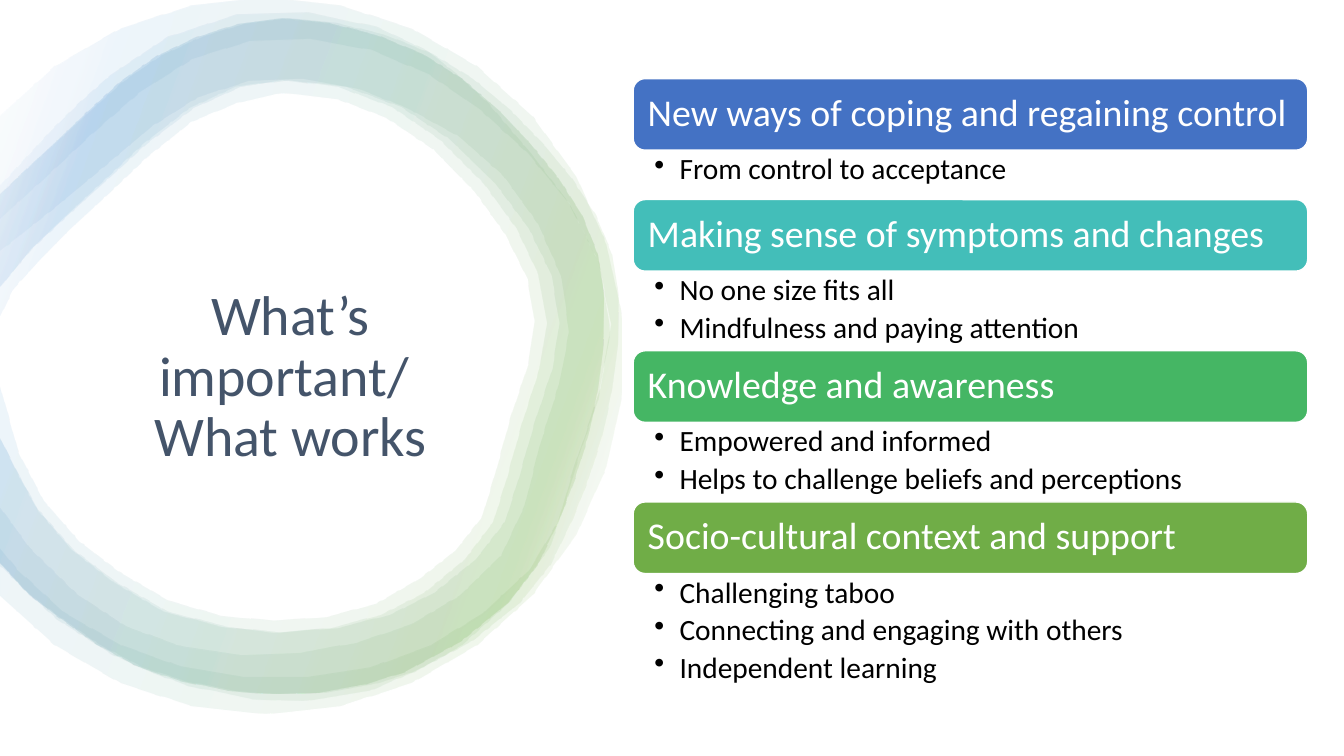
import math

import pptx
import pptx.dml.color
import pptx.enum.shapes
import pptx.enum.text
import pptx.oxml
import pptx.oxml.ns
import pptx.util
from pptx.util import Inches

RGBColor = pptx.dml.color.RGBColor
MSO_SHAPE = pptx.enum.shapes.MSO_SHAPE
MSO_ANCHOR = pptx.enum.text.MSO_ANCHOR
PP_ALIGN = pptx.enum.text.PP_ALIGN

WHITE = RGBColor(0xFF, 0xFF, 0xFF)
BLACK = RGBColor(0x00, 0x00, 0x00)
SLATE = RGBColor(0x44, 0x54, 0x6A)
BLUE = RGBColor(0x44, 0x72, 0xC4)
SKY = RGBColor(0x5B, 0x9B, 0xD5)
TEAL = RGBColor(0x43, 0xBE, 0xB9)
EMERALD = RGBColor(0x45, 0xB6, 0x64)
GREEN = RGBColor(0x70, 0xAD, 0x47)

RING_STOPS = [(2, WHITE), (16, GREEN), (85, SKY), (100, WHITE)]

# Ring edges in inches: outer ones run clockwise from the left slide edge,
# inner ones run back the other way.
LOOSE_OUTER = [
    (0, 1.84), (0.5, 1.3), (1.09, 0.75), (1.66, 0.37), (2.34, 0.15), (3.05, 0.13),
    (3.73, 0.27), (4.24, 0.51), (4.84, 1.03), (5.26, 1.52), (5.65, 2.03), (5.94, 2.62),
    (6.05, 3.29), (5.93, 3.96), (5.74, 4.52), (5.45, 5.43), (5.05, 5.97), (4.56, 6.41),
    (3.66, 6.85), (3, 6.95), (2.51, 6.93), (1.86, 6.8), (1.11, 6.49), (0.56, 6.14),
    (0, 5.61)]
LOOSE_INNER = [
    (0, 5.03), (0.29, 5.43), (0.76, 5.89), (1.25, 6.21), (1.81, 6.41), (2.39, 6.49),
    (2.97, 6.47), (3.53, 6.37), (4.07, 6.19), (4.56, 5.9), (4.97, 5.5), (5.2, 5.01),
    (5.35, 4.41), (5.54, 3.81), (5.64, 3.29), (5.56, 2.74), (5.33, 2.22), (4.99, 1.75),
    (4.55, 1.36), (4.04, 1.08), (3.53, 0.88), (2.99, 0.79), (2.46, 0.81), (1.96, 0.97),
    (1.5, 1.26), (1.05, 1.64), (0.57, 2.04), (0, 2.49)]
MAIN_OUTER = [
    (0, 1.92), (0.56, 1.39), (1.55, 0.55), (2.79, 0.18), (4.18, 0.53), (5.25, 1.42),
    (5.92, 2.52), (5.92, 3.86), (5.54, 5.14), (5.03, 5.97), (4, 6.66), (2.71, 6.88),
    (1.37, 6.61), (0.27, 5.88), (0, 5.58)]
THICK_INNER = [
    (0, 3.83), (0.18, 4.48), (0.43, 4.96), (0.78, 5.36), (1.67, 5.95), (2.71, 6.15),
    (3.72, 5.98), (4.51, 5.45), (4.77, 5.12), (4.9, 4.69), (5.05, 4.14), (5.23, 3.6),
    (5.29, 3.18), (5.22, 2.76), (5, 2.32), (4.7, 1.9), (4.29, 1.48), (3.83, 1.17),
    (3.34, 0.98), (2.79, 0.92), (1.9, 1.2), (1.08, 1.91), (0.69, 2.27), (0.13, 2.86),
    (0, 3.13)]
THIN_INNER = [
    (0, 4.34), (0.36, 5.04), (0.7, 5.44), (1.62, 6.06), (2.71, 6.27), (3.27, 6.22),
    (3.77, 6.09), (4.2, 5.87), (4.6, 5.54), (4.88, 5.17), (5.02, 4.72), (5.16, 4.21),
    (5.34, 3.65), (5.41, 3.2), (5.33, 2.72), (5.11, 2.26), (4.79, 1.82), (4.35, 1.38),
    (3.88, 1.06), (3.35, 0.86), (2.79, 0.79), (2.32, 0.86), (1.87, 1.07), (1.42, 1.42),
    (0.99, 1.82), (0.3, 2.47), (0, 2.84)]
CIRCLE_OUTER = [
    (2.63 + 3.55 * math.cos(math.radians(a)), 3.53 + 3.55 * math.sin(math.radians(a)))
    for a in range(222, 499, 12)]
CIRCLE_INNER = [
    (0, 5.44), (0.17, 5.65), (0.64, 6.08), (1.2, 6.4), (1.79, 6.61), (2.41, 6.71),
    (3.04, 6.71), (3.66, 6.62), (4.24, 6.41), (4.78, 6.08), (5.24, 5.65), (5.52, 5.18),
    (5.68, 4.63), (5.94, 3.85), (6.05, 3.22), (5.92, 2.59), (5.63, 2.02), (5.22, 1.52),
    (4.75, 1.09), (4.24, 0.74), (3.67, 0.5), (3.07, 0.39), (2.47, 0.41), (1.9, 0.59),
    (1.38, 0.92), (0.9, 1.34), (0.42, 1.79), (0, 2.17)]
RINGS = [
    (LOOSE_OUTER, LOOSE_INNER, 1),
    (MAIN_OUTER, THIN_INNER, 1.025),
    (MAIN_OUTER, THICK_INNER, 1),
    (MAIN_OUTER, THIN_INNER, 1),
    (CIRCLE_OUTER, CIRCLE_INNER, 1)]

THEMES = [
    ("New ways of coping and regaining control", BLUE, 0.49,
     ["From control to acceptance"]),
    ("Making sense of symptoms and changes", TEAL, 0.79,
     ["No one size fits all", "Mindfulness and paying attention"]),
    ("Knowledge and awareness", EMERALD, 0.79,
     ["Empowered and informed", "Helps to challenge beliefs and perceptions"]),
    ("Socio-cultural context and support", GREEN, 1.19,
     ["Challenging taboo", "Connecting and engaging with others", "Independent learning"])]


def smooth(points, spacing=0.5):
    """Return points about spacing apart on a Catmull-Rom curve through points."""
    ends = [points[0], *points, points[-1]]
    curve = []
    for a, b, c, d in zip(ends, ends[1:], ends[2:], ends[3:]):
        steps = max(1, round(math.dist(b, c) / spacing))
        for t in (i / steps for i in range(steps)):
            curve.append(tuple(
                q + t / 2 * (r - p + t * (2 * p - 5 * q + 4 * r - u
                                          + t * (3 * (q - r) + u - p)))
                for p, q, r, u in zip(a, b, c, d)))
    return curve + [points[-1]]


def write(tf, lines, size, color, align=PP_ALIGN.LEFT, anchor=MSO_ANCHOR.TOP,
          insets=(0.1, 0.05), after=0, bullet=False):
    """Fill a text frame with one paragraph per line."""
    tf.word_wrap = True
    tf.auto_size = pptx.enum.text.MSO_AUTO_SIZE.NONE
    tf.vertical_anchor = anchor
    tf.margin_left = tf.margin_right = Inches(insets[0])
    tf.margin_top = tf.margin_bottom = Inches(insets[1])
    for i, line in enumerate(lines):
        p = tf.add_paragraph() if i else tf.paragraphs[0]
        p.alignment, p.line_spacing = align, 0.9
        p.space_before, p.space_after = pptx.util.Pt(0), pptx.util.Pt(after)
        for j, part in enumerate(line.split("\n")):
            if j:
                p.add_line_break()
            r = p.add_run()
            r.text = part
            r.font.name, r.font.size = "Calibri", pptx.util.Pt(size)
            r.font.color.rgb = color
        if bullet:
            pPr = p._p.get_or_add_pPr()
            pPr.set("marL", str(Inches(0.25)))
            pPr.set("indent", str(-Inches(0.25)))
            pPr.append(pptx.oxml.parse_xml(
                f'<a:buChar {pptx.oxml.ns.nsdecls("a")} char="•"/>'))


class Deck:
    def __init__(self):
        self.prs = pptx.Presentation()
        self.prs.slide_width, self.prs.slide_height = Inches(13.33), Inches(7.5)
        self.s = self.prs.slides.add_slide(self.prs.slide_layouts[5])

    def box(self, kind, at, fill, line=None):
        sp = self.s.shapes.add_shape(kind, *map(Inches, at))
        sp.shadow.inherit = False
        sp.fill.solid()
        sp.fill.fore_color.rgb = fill
        if line is None:
            sp.line.fill.background()
        else:
            sp.line.color.rgb, sp.line.width = line, pptx.util.Pt(1)
        return sp

    def ring(self, outer, inner, stretch):
        outline = [(Inches(x * stretch), Inches(y))
                   for x, y in smooth(outer) + smooth(inner)]
        fb = self.s.shapes.build_freeform(*outline[0])
        fb.add_line_segments(outline[1:], close=True)
        sp = fb.convert_to_shape()
        sp.shadow.inherit = False
        sp.line.fill.background()
        sp.fill.background()
        stops = "".join(
            f'<a:gs pos="{pos * 1000}"><a:srgbClr val="{color}">'
            f'<a:alpha val="10000"/></a:srgbClr></a:gs>' for pos, color in RING_STOPS)
        spPr = sp._element.spPr
        spPr.replace(spPr.find(pptx.oxml.ns.qn("a:noFill")), pptx.oxml.parse_xml(
            f'<a:gradFill {pptx.oxml.ns.nsdecls("a")} rotWithShape="1"><a:gsLst>{stops}'
            f'</a:gsLst><a:lin ang="{200 * 60000}" scaled="0"/></a:gradFill>'))

    def title(self, text, at):
        sp = self.s.shapes.title
        sp.left, sp.top, sp.width, sp.height = map(Inches, at)
        write(sp.text_frame, [text], 40, SLATE, align=PP_ALIGN.CENTER,
              anchor=MSO_ANCHOR.MIDDLE)
        self.s.shapes._spTree.append(sp._element)  # in front of the rings

    def bar(self, text, at, fill):
        sp = self.box(MSO_SHAPE.ROUNDED_RECTANGLE, at, fill, WHITE)
        write(sp.text_frame, [text], 27, WHITE, anchor=MSO_ANCHOR.MIDDLE,
              insets=(0.11, 0.11))

    def bullets(self, lines, at):
        sp = self.s.shapes.add_textbox(*map(Inches, at))
        write(sp.text_frame, lines, 21, BLACK, insets=(0.21, 0.04), after=4.2,
              bullet=True)


def main():
    deck = Deck()
    deck.box(MSO_SHAPE.RECTANGLE, (0, 0.03, 13.33, 7.5), WHITE)
    for ring in RINGS:
        deck.ring(*ring)
    deck.title("What’s important/ \nWhat works", (0.88, 2.21, 4, 3.08))
    left, top, width, bar_height = 6.28, 0.78, 6.69, 0.71
    for heading, color, height, points in THEMES:
        deck.bar(heading, (left, top, width, bar_height), color)
        deck.bullets(points, (left, top + bar_height, width, height))
        top += bar_height + height
    deck.prs.save("out.pptx")


if __name__ == "__main__":
    main()
